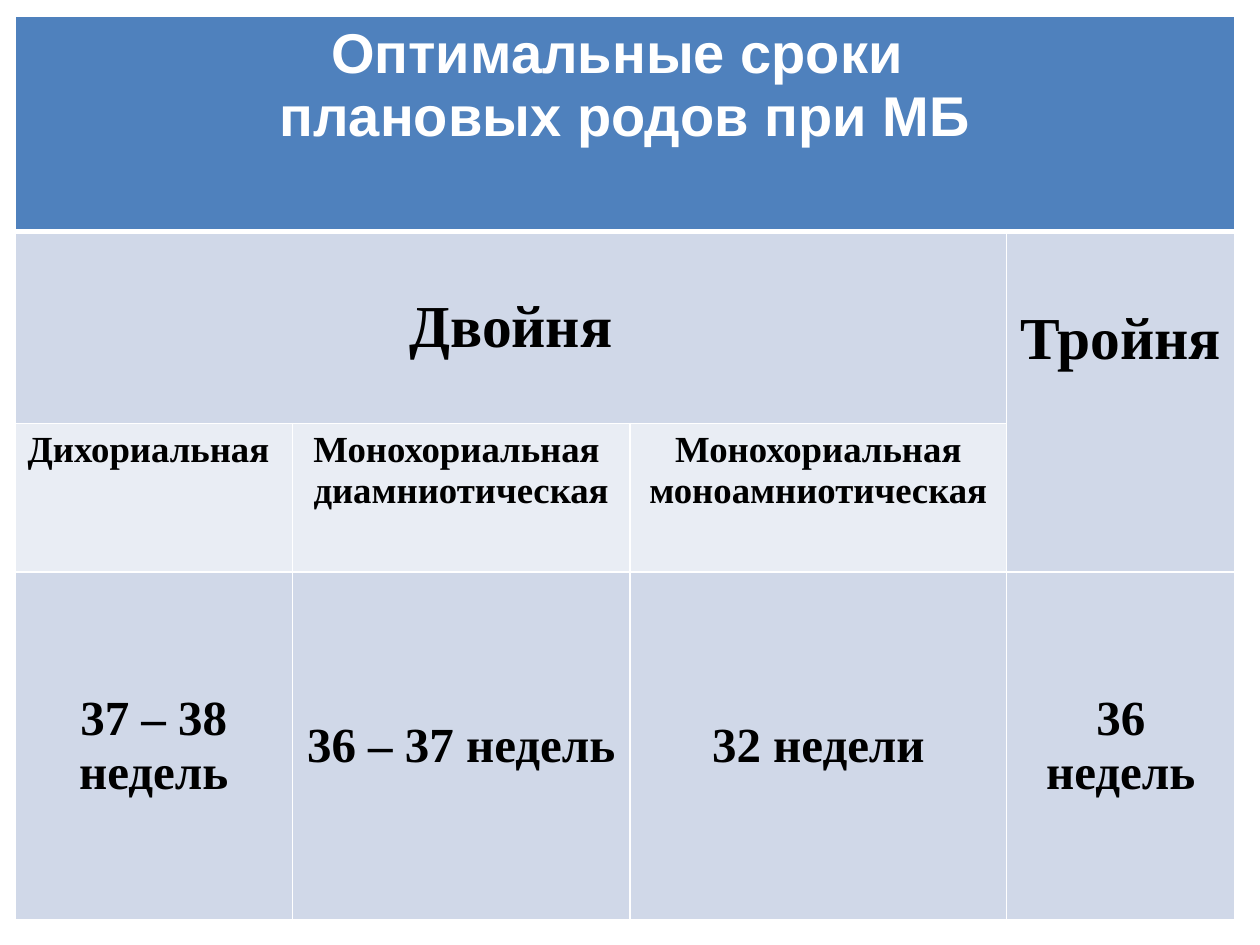
from dataclasses import dataclass
from lxml.etree import SubElement
from pptx import Presentation
from pptx.dml.color import RGBColor
from pptx.enum.text import MSO_ANCHOR, PP_ALIGN
from pptx.oxml.ns import qn
from pptx.util import Inches, Pt


@dataclass(frozen=True)
class Theme:
    blue: str = "4F81BD"
    mid: str = "D0D8E8"
    pale: str = "E9EDF4"
    white: str = "FFFFFF"
    black: str = "000000"
    sans: str = "Arial"
    serif: str = "Times New Roman"
    title: int = 32
    group: int = 34
    kind: int = 21
    term: int = 28


T = Theme()
MID, TOP = MSO_ANCHOR.MIDDLE, MSO_ANCHOR.TOP
LEFT, CENTER = PP_ALIGN.LEFT, PP_ALIGN.CENTER

# Grid, in inches
COLS = [2.2, 2.68, 2.99, 1.81]
ROWS = [1.71, 1.52, 1.18, 2.76]
X, Y = 0.12, 0.13
DROP = 0.59  # top inset that lowers the triplet heading

# Looks: fill, font, colour, size, anchor
HEAD = (T.blue, T.sans, T.white, T.title, TOP)
GROUP = (T.mid, T.serif, T.black, T.group, MID)
SIDE = (T.mid, T.serif, T.black, T.group, TOP)
KIND = (T.pale, T.serif, T.black, T.kind, TOP)
TERM = (T.mid, T.serif, T.black, T.term, MID)

# Content: row, column, rows spanned, columns spanned, look, align, lines
CELLS = [
    (0, 0, 1, 4, HEAD, CENTER,
     ["Оптимальные сроки ", "плановых родов при МБ"]),
    (1, 0, 1, 3, GROUP, CENTER, ["Двойня"]),
    (1, 3, 2, 1, SIDE, CENTER, ["Тройня"]),
    (2, 0, 1, 1, KIND, LEFT, ["Дихориальная"]),
    (2, 1, 1, 1, KIND, CENTER, ["Монохориальная ", "диамниотическая"]),
    (2, 2, 1, 1, KIND, CENTER, ["Монохориальная", "моноамниотическая"]),
    (3, 0, 1, 1, TERM, CENTER, ["37 – 38 недель"]),
    (3, 1, 1, 1, TERM, CENTER, ["36 – 37 недель"]),
    (3, 2, 1, 1, TERM, CENTER, ["32 недели"]),
    (3, 3, 1, 1, TERM, CENTER, ["36 недель"]),
]


def edge(cell, low):
    """Draw white borders; low is the width of the bottom one."""
    props = cell._tc.get_or_add_tcPr()
    for n, (side, width) in enumerate(zip("LRTB", (1, 1, 1, low))):
        line = SubElement(props, qn(f"a:ln{side}"), w=str(Pt(width)))
        paint = SubElement(line, qn("a:solidFill"))
        SubElement(paint, qn("a:srgbClr"), val=T.white)
        props.insert(n, line)


def write(cell, look, align, lines):
    fill, face, ink, size, anchor = look
    cell.fill.solid()
    cell.fill.fore_color.rgb = RGBColor.from_string(fill)
    cell.vertical_anchor = anchor
    frame = cell.text_frame
    for n, text in enumerate(lines):
        para = frame.add_paragraph() if n else frame.paragraphs[0]
        para.alignment = align
        run = para.add_run()
        run.text = text
        font = run.font
        font.name, font.size, font.bold = face, Pt(size), True
        font.color.rgb = RGBColor.from_string(ink)


def main():
    deck = Presentation()
    deck.slide_width, deck.slide_height = Inches(10), Inches(7.5)
    slide = deck.slides.add_slide(deck.slide_layouts[6])

    # Table frame
    table = slide.shapes.add_table(
        len(ROWS), len(COLS), Inches(X), Inches(Y),
        Inches(sum(COLS)), Inches(sum(ROWS))).table
    for col, width in zip(table.columns, COLS):
        col.width = Inches(width)
    for row, height in zip(table.rows, ROWS):
        row.height = Inches(height)

    # Cells and spans
    for row, col, down, across, look, align, lines in CELLS:
        cell = table.cell(row, col)
        if down * across > 1:
            cell.merge(table.cell(row + down - 1, col + across - 1))
        write(cell, look, align, lines)
        if look is SIDE:
            cell.margin_top = Inches(DROP)

    # Borders
    for r in range(len(ROWS)):
        for c in range(len(COLS)):
            edge(table.cell(r, c), 1 if r else 3)

    deck.save("out.pptx")


if __name__ == "__main__":
    main()
